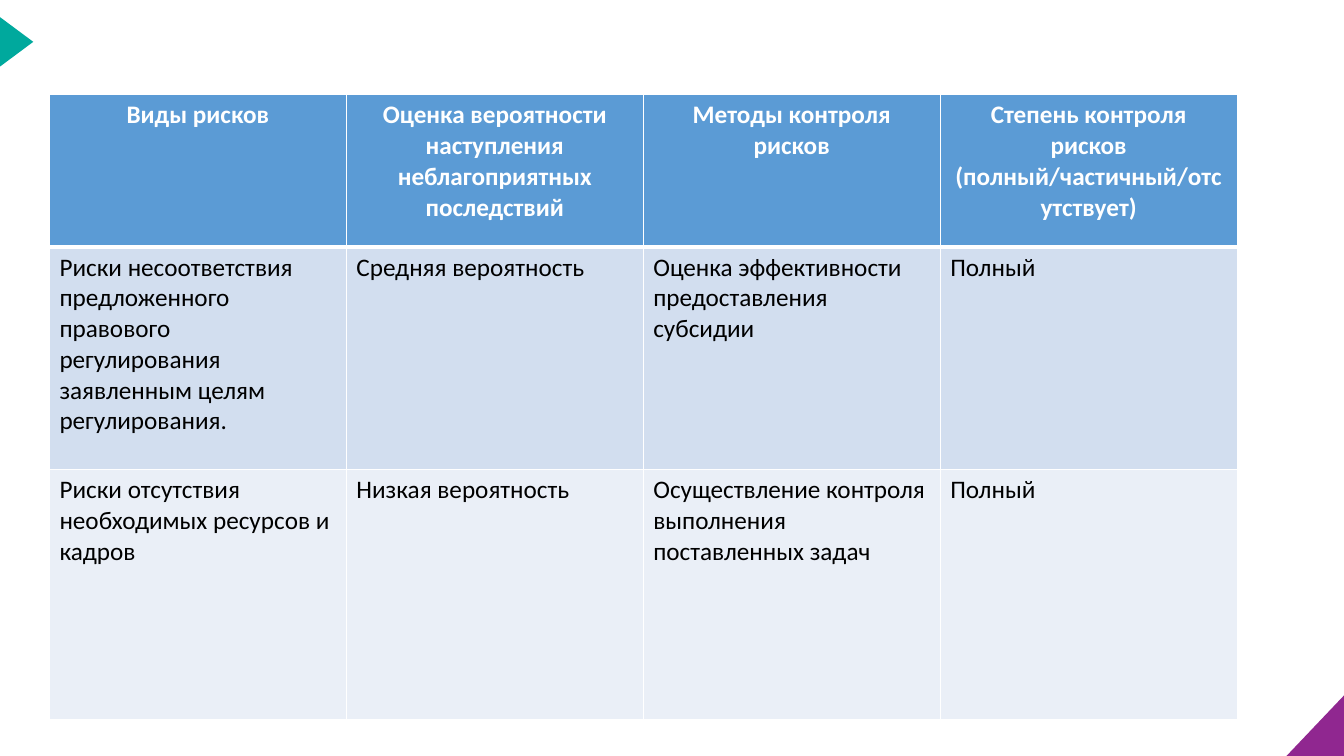
import pptx
import pptx.util
import pptx.dml.color
import pptx.enum.shapes
import pptx.enum.text
import pptx.oxml
import pptx.oxml.ns
from lxml import etree

Inches = pptx.util.Inches
ALIGN = pptx.enum.text.PP_ALIGN

HEADER = [
    "Виды рисков",
    "Оценка вероятности наступления неблагоприятных последствий",
    "Методы контроля рисков",
    "Степень контроля рисков (полный/частичный/отсутствует)",
]
RISKS = [
    [
        "Риски несоответствия предложенного правового регулирования заявленным целям регулирования.",
        "Средняя вероятность",
        "Оценка эффективности предоставления субсидии",
        "Полный",
    ],
    [
        "Риски отсутствия необходимых ресурсов и кадров",
        "Низкая вероятность",
        "Осуществление контроля выполнения поставленных задач",
        "Полный",
    ],
]
ROW_HEIGHTS = [1.51, 2.21, 2.48]
ROW_FILLS = ["5B9BD5", "D2DEEF", "EAEFF7"]
LEFT, TOP, WIDTH = 0.49, 0.94, 11.78
CORNER = [(13.33, 7.5), (12.76, 7.5), (13.33, 6.9)]


def color(value):
    return pptx.dml.color.RGBColor.from_string(value)


def paint(shape, value):
    shape.shadow.inherit = False
    shape.fill.solid()
    shape.fill.fore_color.rgb = color(value)
    shape.line.fill.background()


def add_border(cell, side, points):
    qn = pptx.oxml.ns.qn
    tc_pr = cell._tc.get_or_add_tcPr()
    ln = etree.SubElement(tc_pr, qn(f"a:ln{side}"), w=str(pptx.util.Pt(points)))
    fill = etree.SubElement(ln, qn("a:solidFill"))
    etree.SubElement(fill, qn("a:srgbClr"), val="FFFFFF")


def fill_cell(cell, text, row):
    is_header = row == 0
    for side in "LRTB":
        thick = (row, side) in [(0, "B"), (1, "T")]
        add_border(cell, side, 3 if thick else 1)
    cell.fill.solid()
    cell.fill.fore_color.rgb = color(ROW_FILLS[row])
    p = cell.text_frame.paragraphs[0]
    p.alignment = ALIGN.CENTER if is_header else ALIGN.LEFT
    r = p.add_run()
    r.text = text
    r.font.name = "Calibri"
    r.font.size = pptx.util.Pt(18)
    r.font.bold = is_header
    r.font.color.rgb = color("FFFFFF" if is_header else "000000")


def main():
    prs = pptx.Presentation()
    prs.slide_width = Inches(13.33)
    prs.slide_height = Inches(7.5)
    s = prs.slides.add_slide(prs.slide_layouts[6])

    marker = s.shapes.add_shape(
        pptx.enum.shapes.MSO_SHAPE.ISOSCELES_TRIANGLE,
        Inches(-0.08), Inches(0.25), Inches(0.49), Inches(0.33),
    )
    marker.rotation = 90
    paint(marker, "00A99D")

    points = [(Inches(x), Inches(y)) for x, y in CORNER]
    outline = s.shapes.build_freeform(*points[0])
    outline.add_line_segments(points[1:], close=True)
    paint(outline.convert_to_shape(), "902790")

    rows = [HEADER] + RISKS
    table = s.shapes.add_table(
        len(rows), len(HEADER),
        Inches(LEFT), Inches(TOP), Inches(WIDTH), Inches(sum(ROW_HEIGHTS)),
    ).table
    for column in table.columns:
        column.width = Inches(WIDTH / len(HEADER))
    for i, texts in enumerate(rows):
        table.rows[i].height = Inches(ROW_HEIGHTS[i])
        for j, text in enumerate(texts):
            fill_cell(table.cell(i, j), text, i)

    prs.save("out.pptx")


if __name__ == "__main__":
    main()
